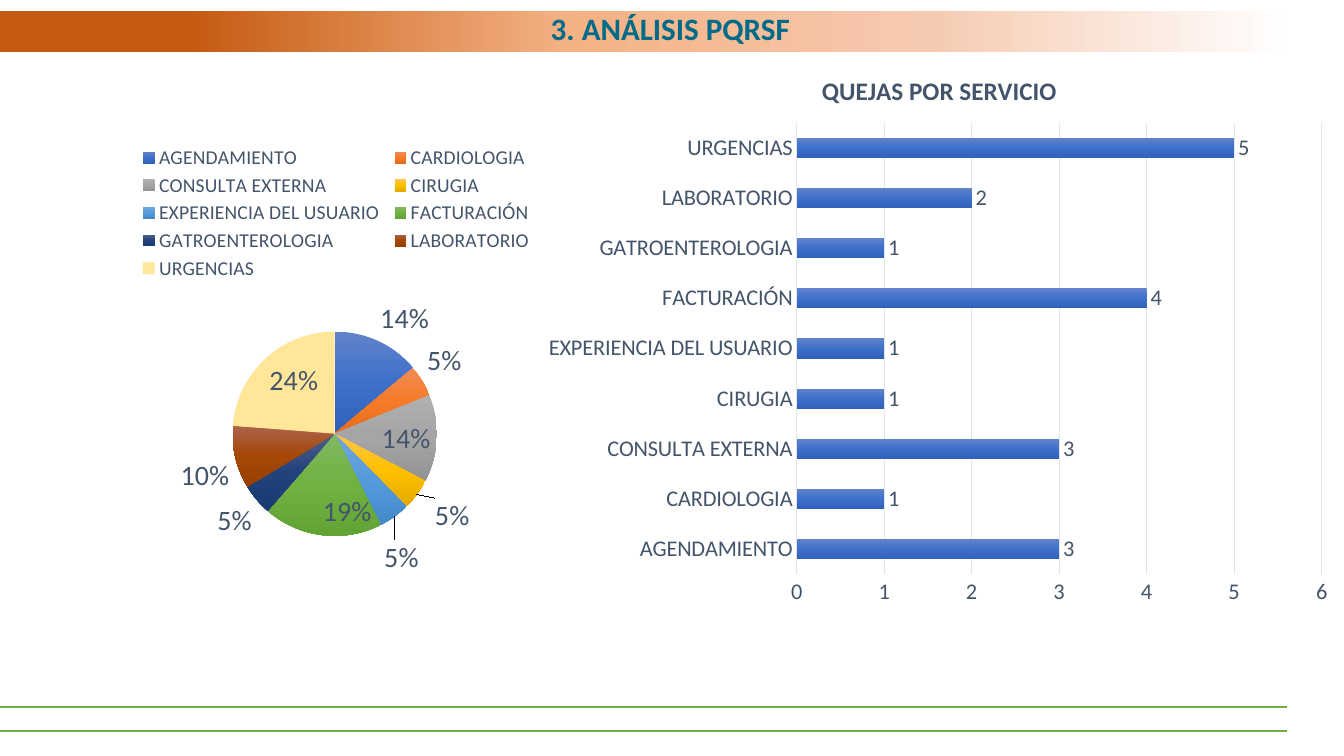
from lxml import etree
from pptx import Presentation
from pptx import util as u
from pptx.chart.data import CategoryChartData
from pptx.dml.color import RGBColor
from pptx.enum import chart as ch, shapes, text
from pptx.oxml import parse_xml
from pptx.oxml.ns import nsdecls, qn

SERVICES = ["AGENDAMIENTO", "CARDIOLOGIA", "CONSULTA EXTERNA", "CIRUGIA",
            "EXPERIENCIA DEL USUARIO", "FACTURACIÓN", "GATROENTEROLOGIA",
            "LABORATORIO", "URGENCIAS"]
COMPLAINTS = [3, 1, 3, 1, 1, 4, 1, 2, 5]
SHARES = [14, 5, 14, 5, 5, 19, 5, 10, 24]
SLICES = ["6183CB 3E70CA 3062BB", "F18C57 F67B28 E56C19", "AFAFAF A5A5A5 939393",
          "FFC64B FFC000 E3AB00", "71A6DB 559BDB 448ACA", "81B861 6FB242 62A336",
          "516089 22427D 1A3A72", "AB634B A54707 983E00", "FFE699"]
INSIDE = {2, 5, 8}
LABEL_SHIFTS = {3: (0.02, 0), 4: (-0.02, 0.04)}


def rgb(value):
    return RGBColor.from_string(value)


def paint(fill, stops, angle=0):
    fill.solid()
    if len(stops) == 1:
        fill.fore_color.rgb = rgb(stops[0][1])
        return
    marks = "".join(f'<a:gs pos="{pos * 1000}"><a:srgbClr val="{color}"/></a:gs>'
                    for pos, color in stops)
    solid = fill._xPr.find(qn("a:solidFill"))
    solid.getparent().replace(solid, parse_xml(
        f'<a:gradFill {nsdecls("a")} rotWithShape="1"><a:gsLst>{marks}</a:gsLst>'
        f'<a:lin ang="{angle * 60000}" scaled="0"/></a:gradFill>'))


def shaded(colors):
    return list(zip((0, 50, 100), colors.split()))


def set_layout(parent, index, **values):
    for old in parent.findall(qn("c:layout")):
        parent.remove(old)
    items = "".join(f'<c:{key} val="{value}"/>' for key, value in values.items())
    parent.insert(index, parse_xml(
        f'<c:layout {nsdecls("c")}><c:manualLayout>{items}</c:manualLayout></c:layout>'))


def place(parent, index, x, y, w, h, **target):
    set_layout(parent, index, **target, xMode="edge", yMode="edge", x=x, y=y, w=w, h=h)


class Deck:
    font = "Calibri"
    ink = "44546A"
    grid = "E0E5EB"

    def __init__(self):
        self.prs = Presentation()
        self.prs.slide_width, self.prs.slide_height = u.Cm(33.87), u.Cm(19.05)
        self.s = self.prs.slides.add_slide(self.prs.slide_layouts[5])

    def style(self, font, size, color=None, bold=False):
        font.name, font.size, font.bold = self.font, u.Pt(size), bold
        font.color.rgb = rgb(color or self.ink)

    def band(self, x, y, w, h, stops):
        sp = self.s.shapes.add_shape(shapes.MSO_SHAPE.RECTANGLE, *map(u.Cm, (x, y, w, h)))
        sp.shadow.inherit = False
        sp.line.fill.background()
        paint(sp.fill, stops)

    def rule(self, y, width, color):
        line = self.s.shapes.add_connector(
            shapes.MSO_CONNECTOR.STRAIGHT, u.Cm(width), u.Cm(y), 0, u.Cm(y))
        line.line.color.rgb, line.line.width = rgb(color), u.Pt(1.5)
        etree.SubElement(line._element.spPr, qn("a:effectLst"))

    def title(self, wording, x, y, w, h):
        sp = self.s.shapes.title
        sp.left, sp.top, sp.width, sp.height = map(u.Cm, (x, y, w, h))
        self.s.shapes._spTree.append(sp._element)
        tf = sp.text_frame
        tf.text = wording
        tf.auto_size = text.MSO_AUTO_SIZE.NONE
        tf.vertical_anchor = text.MSO_ANCHOR.MIDDLE
        tf.margin_top = tf.margin_bottom = 0
        p = tf.paragraphs[0]
        p.alignment, p.line_spacing = text.PP_ALIGN.CENTER, 0.8
        self.style(p.font, 22.2, "006B89", True)

    def chart(self, kind, values, size, box):
        data = CategoryChartData()
        data.categories = SERVICES
        data.add_series("Series 1", values)
        chart = self.s.shapes.add_chart(kind, *map(u.Cm, box), data).chart
        self.style(chart.font, size)
        chart._chartSpace.chart.addnext(parse_xml(
            f'<c:spPr {nsdecls("c", "a")}><a:noFill/><a:ln><a:noFill/></a:ln></c:spPr>'))
        return chart

    def bars(self, heading, values, *box):
        chart = self.chart(ch.XL_CHART_TYPE.BAR_CLUSTERED, values, 16, box)
        chart.has_legend = False
        tf = chart.chart_title.text_frame
        tf.text = heading
        self.style(tf.paragraphs[0].font, 18, bold=True)
        place(chart._chartSpace.chart.plotArea, 0, 0.324, 0.126, 0.648, 0.797,
              layoutTarget="inner")
        plot = chart.plots[0]
        plot.gap_width, plot.vary_by_categories = 150, False
        series = plot.series[0]
        paint(series.format.fill, shaded(SLICES[0]), 90)
        labels = series.data_labels
        labels.show_value = True
        labels.position = ch.XL_LABEL_POSITION.OUTSIDE_END
        self.style(labels.font, 16)
        for axis in (chart.category_axis, chart.value_axis):
            axis.major_tick_mark = axis.minor_tick_mark = ch.XL_TICK_MARK.NONE
            self.style(axis.tick_labels.font, 16)
        axis.minimum_scale, axis.maximum_scale, axis.major_unit = 0, 6, 1
        axis.format.line.fill.background()
        chart.category_axis.has_major_gridlines = False
        for line in (axis.major_gridlines.format.line, chart.category_axis.format.line):
            line.color.rgb, line.width = rgb(self.grid), u.Pt(0.75)

    def pie(self, values, *box):
        chart = self.chart(ch.XL_CHART_TYPE.PIE, values, 18, box)
        chart.has_title = False
        chart.has_legend = True
        legend = chart.legend
        legend.position, legend.include_in_layout = ch.XL_LEGEND_POSITION.TOP, False
        self.style(legend.font, 14)
        place(legend._element, 1, 0.2, 0.02, 0.6, 0.31)
        place(chart._chartSpace.chart.plotArea, 0, 0.346, 0.434, 0.304, 0.447,
              layoutTarget="inner")
        plot = chart.plots[0]
        plot.vary_by_categories = True
        series = plot.series[0]
        labels = series.data_labels
        labels.show_percentage, labels.show_value = True, False
        labels.number_format, labels.number_format_is_linked = "0%", False
        self.style(labels.font, 20)
        pos = ch.XL_LABEL_POSITION
        for i, colors in enumerate(SLICES):
            point = series.points[i]
            paint(point.format.fill, shaded(colors) if " " in colors else [(0, colors)], 90)
            label = point.data_label
            self.style(label.font, 20)
            label.position = pos.INSIDE_END if i in INSIDE else pos.OUTSIDE_END
        for i, item in enumerate(labels._element.findall(qn("c:dLbl"))):
            item.find(qn("c:showVal")).set("val", "0")
            item.find(qn("c:showPercent")).set("val", "1")
            if i in LABEL_SHIFTS:
                dx, dy = LABEL_SHIFTS[i]
                set_layout(item, 1, x=dx, y=dy)


def main():
    deck = Deck()
    deck.rule(18.42, 32.44, "70AD47")
    deck.band(0, 0.28, 33.87, 1.02,
              [(14, "C55A11"), (42, "F4B183"), (69, "F6CAB1"), (96, "FFFFFF")])
    deck.rule(17.81, 32.44, "70AD47")
    deck.title("3. ANÁLISIS PQRSF", 1.07, 0.28, 31.65, 1.02)
    deck.bars("QUEJAS POR SERVICIO", COMPLAINTS, 13.46, 1.3, 20.42, 14.27)
    deck.pie(SHARES, 0, 3.35, 16.94, 11.53)
    deck.prs.save("out.pptx")


if __name__ == "__main__":
    main()
